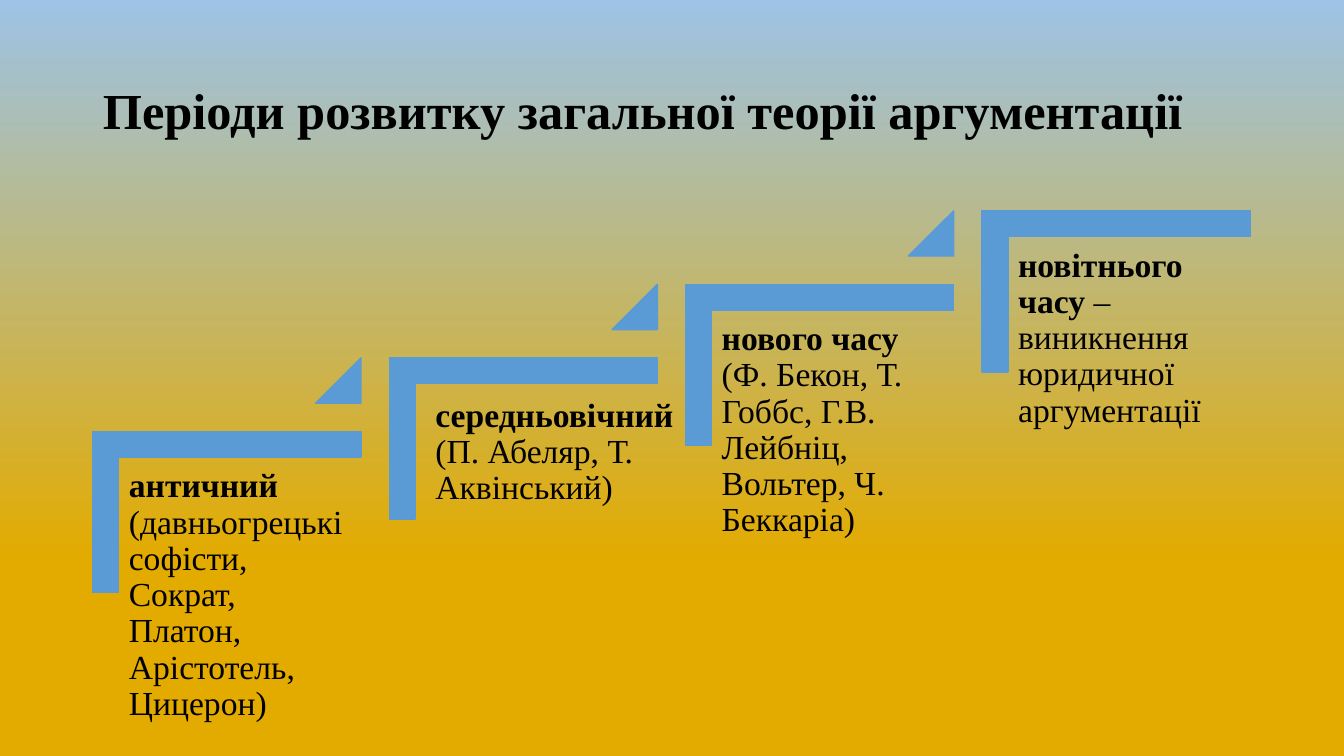
"""Build the slide on the periods of the general theory of argumentation."""
from pptx import Presentation
from pptx.dml.color import RGBColor
from pptx.enum.shapes import MSO_SHAPE as Preset
from pptx.enum.text import MSO_ANCHOR as Anchor, PP_ALIGN as Align
from pptx.util import Inches, Pt

STEP_BLUE = "5B9BD5"
STEP_X, STEP_Y = 2.94, -0.73


def color(value):
    return RGBColor.from_string(value)


def add_text(paragraph, text, size=24, bold=False, font="Times New Roman", ink="000000"):
    paragraph.alignment = Align.LEFT
    paragraph.line_spacing = 0.9
    run = paragraph.add_run()
    run.text = text
    run.font.name = font
    run.font.size = Pt(size)
    run.font.bold = bold
    run.font.color.rgb = color(ink)


deck = Presentation()
deck.slide_width, deck.slide_height = Inches(13.33), Inches(7.5)
slide = deck.slides.add_slide(deck.slide_layouts[5])

backdrop = slide.background.fill
backdrop.gradient()
backdrop.gradient_angle = 90
for stop, (position, shade) in zip(backdrop.gradient_stops, [(0.26, "E3AB00"), (1, "9DC3E6")]):
    stop.position = position
    stop.color.rgb = color(shade)

heading = slide.shapes.title
heading.left, heading.top = Inches(0.92), Inches(0.4)
heading.width, heading.height = Inches(11.5), Inches(1.45)
heading.text_frame.vertical_anchor = Anchor.MIDDLE
add_text(heading.text_frame.paragraphs[0], "Періоди розвитку загальної теорії аргументації",
         size=36, bold=True)

# period, details, then the shift right, shift down and extra width of its text
periods = [
    ("античний", " (давньогрецькі софісти, Сократ, Платон, Арістотель, Цицерон)", 0, 0, 0),
    ("середньовічний", " (П. Абеляр, Т. Аквінський)", 0.1, 0.03, 0.17),
    ("нового часу ", "(Ф. Бекон, Т. Гоббс, Г.В. Лейбніц, Вольтер, Ч. Беккаріа)", 0, 0, 0),
    ("новітнього часу ", "– виникнення юридичної аргументації", 0, 0, 0),
]

staircase = slide.shapes.add_group_shape().shapes
for index, (period, details, right, down, extra) in enumerate(periods):
    x, y = index * STEP_X, index * STEP_Y
    corner = staircase.add_shape(Preset.CORNER, Inches(1.45 + x), Inches(3.75 + y),
                                 Inches(1.6), Inches(2.66))
    corner.rotation = 90
    corner.adjustments[0] = corner.adjustments[1] = 0.16
    step_parts = [corner]

    caption = staircase.add_textbox(Inches(1.18 + x + right), Inches(4.55 + y + down),
                                    Inches(2.4 + extra), Inches(2.11)).text_frame
    caption.word_wrap = True
    caption.margin_left = caption.margin_right = Inches(0.1)
    caption.margin_top = caption.margin_bottom = Inches(0.1)
    add_text(caption.paragraphs[0], period, bold=True)
    add_text(caption.paragraphs[0], details)

    if index < len(periods) - 1:
        rise = staircase.add_shape(Preset.ISOSCELES_TRIANGLE, Inches(3.13 + x), Inches(3.55 + y),
                                   Inches(0.45), Inches(0.45))
        rise.adjustments[0] = 1
        step_parts.append(rise)

    for part in step_parts:
        part.shadow.inherit = False
        part.fill.solid()
        part.fill.fore_color.rgb = color(STEP_BLUE)
        part.line.color.rgb = color(STEP_BLUE)
        part.line.width = Pt(1)

deck.save("out.pptx")
